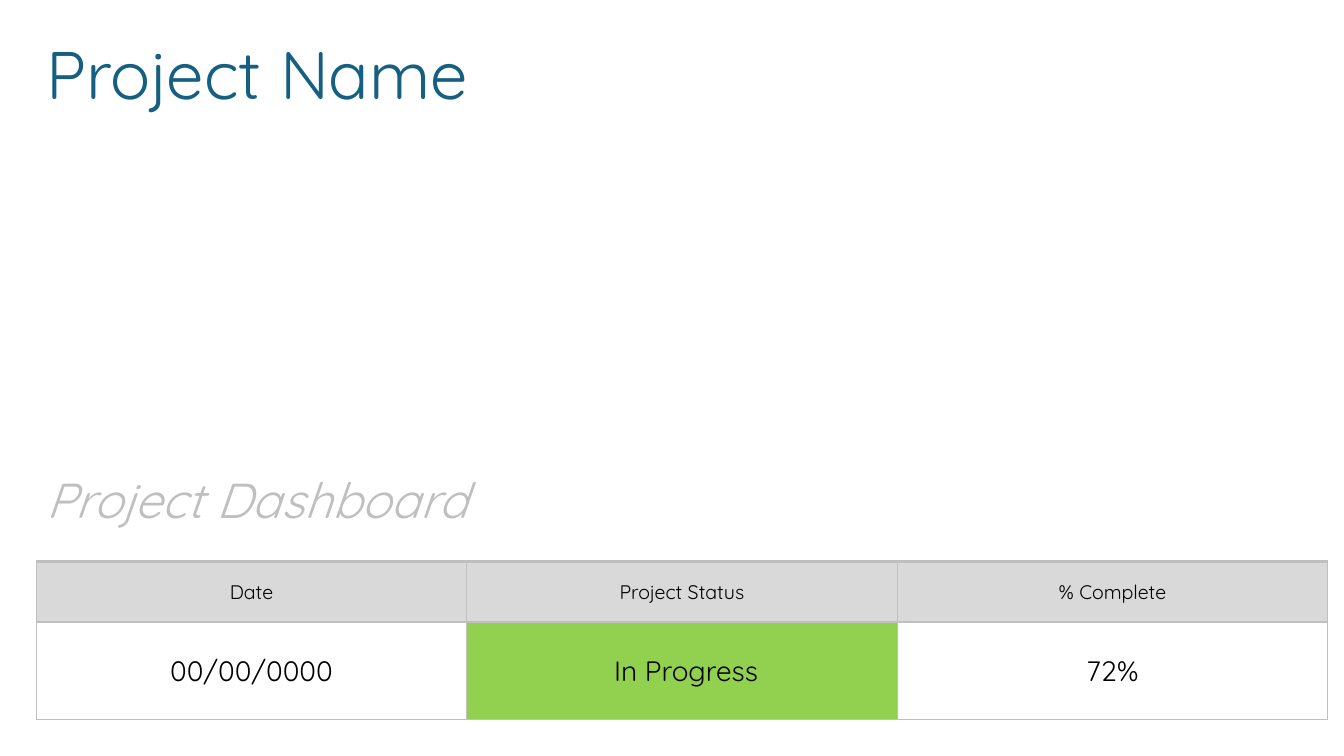
from lxml import etree
from pptx import Presentation
from pptx.dml.color import RGBColor
from pptx.enum import text
from pptx.oxml import ns
from pptx.util import Inches, Pt

COLORS = {"title": "156082", "gray": "BFBFBF", "header": "D9D9D9",
          "white": "FFFFFF", "status": "92D050", "black": "000000"}


def write(tf, content, size, color, italic=False, align=text.PP_ALIGN.LEFT):
    p = tf.paragraphs[0]
    p.alignment = align
    r = p.add_run()
    r.text = content
    r.font.name = "Quicksand"
    r.font.size = Pt(size)
    r.font.italic = italic
    r.font.color.rgb = RGBColor.from_string(COLORS[color])


def add_border(cell, index, side, width):
    ln = etree.Element(ns.qn(f"a:ln{side}"), w=str(Pt(width)))
    fill = etree.SubElement(ln, ns.qn("a:solidFill"))
    etree.SubElement(fill, ns.qn("a:srgbClr"), val=COLORS["gray"])
    cell._tc.get_or_add_tcPr().insert(index, ln)


prs = Presentation()
prs.slide_width, prs.slide_height = Inches(13.33), Inches(7.5)
s = prs.slides.add_slide(prs.slide_layouts[5])

title = s.shapes.title
title.left, title.top = Inches(0.36), Inches(0.27)
title.width, title.height = Inches(12.62), Inches(0.91)
subtitle = s.shapes.add_textbox(Inches(0.36), Inches(4.61), Inches(12.98), Inches(0.69))

for sp, content, size, color, italic in [
    (title, "Project Name", 48, "title", False),
    (subtitle, "Project Dashboard", 35, "gray", True),
]:
    tf = sp.text_frame
    tf.word_wrap = True
    tf.auto_size = text.MSO_AUTO_SIZE.NONE
    tf.vertical_anchor = text.MSO_ANCHOR.TOP
    write(tf, content, size, color, italic=italic)

rows = [
    (0.6, 14, [("Date", "header"), ("Project Status", "header"), ("% Complete", "header")]),
    (0.97, 20, [("00/00/0000", "white"), ("In Progress", "status"), ("72%", "white")]),
]
table = s.shapes.add_table(2, 3, Inches(0.36), Inches(5.57), Inches(12.81), Inches(1.57)).table
for col in table.columns:
    col.width = Inches(4.27)

for i, (height, size, entries) in enumerate(rows):
    table.rows[i].height = Inches(height)
    for j, (content, fill) in enumerate(entries):
        cell = table.cell(i, j)
        cell.fill.solid()
        cell.fill.fore_color.rgb = RGBColor.from_string(COLORS[fill])
        cell.vertical_anchor = text.MSO_ANCHOR.MIDDLE
        cell.margin_left = Inches(0.09 if fill == "status" else 0.01)
        cell.margin_right = cell.margin_top = Inches(0.01)
        cell.margin_bottom = 0
        write(cell.text_frame, content, size, "black", align=text.PP_ALIGN.CENTER)
        for k, side in enumerate("LRTB"):
            add_border(cell, k, side, 3 if side == "T" and i == 0 else 1)

prs.save("out.pptx")
